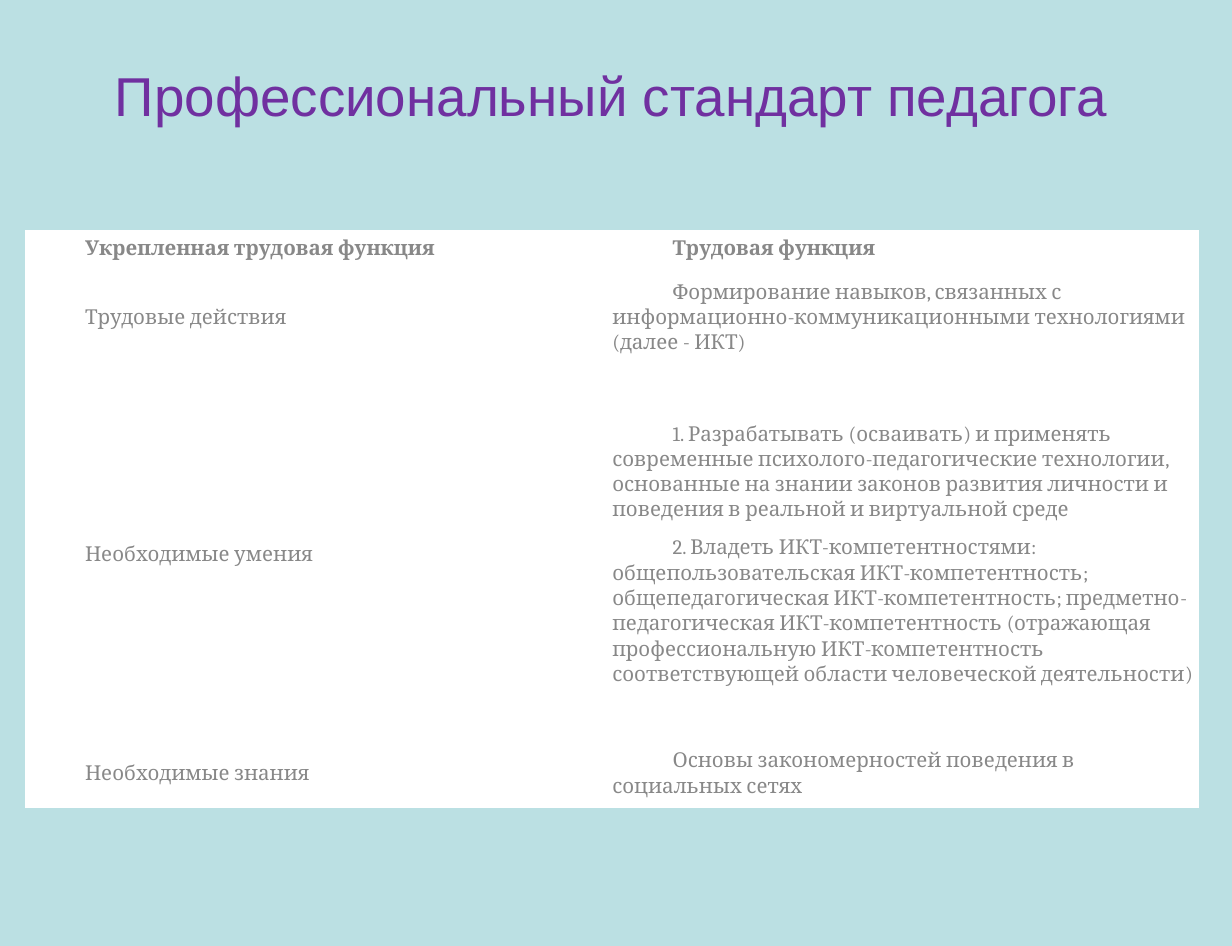
from pptx import Presentation
from pptx.dml.color import RGBColor
from pptx.enum import text
from pptx.util import Inches, Pt

BACKGROUND = RGBColor(0xBB, 0xE0, 0xE3)
PURPLE = RGBColor(0x70, 0x30, 0xA0)
GREY = RGBColor(0x88, 0x88, 0x88)
WHITE = RGBColor(0xFF, 0xFF, 0xFF)
NO_STYLE = "{2D5ABB26-0587-4C30-8999-92F81FD0307C}"

TITLE = "Профессиональный стандарт педагога"
COLUMN_WIDTHS = (4.77, 4.76)
ROW_HEIGHTS = (0.28, 0.85, 2.99, 0.57)
# Each cell is a list of paragraphs.
ROWS = [
    (["Укрепленная трудовая функция"], ["Трудовая функция"]),
    (["Трудовые действия"],
     ["Формирование навыков, связанных с информационно-коммуникационными "
      "технологиями (далее - ИКТ)"]),
    (["Необходимые умения"],
     ["1. Разрабатывать (осваивать) и применять современные "
      "психолого-педагогические технологии, основанные на знании законов "
      "развития личности и поведения в реальной и виртуальной среде",
      "2. Владеть ИКТ-компетентностями: общепользовательская "
      "ИКТ-компетентность; общепедагогическая ИКТ-компетентность; "
      "предметно-педагогическая ИКТ-компетентность (отражающая "
      "профессиональную ИКТ-компетентность соответствующей области "
      "человеческой деятельности)"]),
    (["Необходимые знания"],
     ["Основы закономерностей поведения в социальных сетях"]),
]


def write(frame, paragraphs, *, font, size, color, bold=False, align=None,
          indent=None, line_spacing=None, space_after=None):
    for index, words in enumerate(paragraphs):
        para = frame.add_paragraph() if index else frame.paragraphs[0]
        para.alignment = align
        para.line_spacing = line_spacing
        para.space_after = space_after
        if indent is not None:
            properties = para._p.get_or_add_pPr()
            properties.set("marL", "0")
            properties.set("indent", str(indent))
        span = para.add_run()
        span.text = words
        span.font.name = font
        span.font.size = size
        span.font.bold = bold
        span.font.color.rgb = color


def place_title(page, left, top, width, height):
    title = page.shapes.title
    title.left, title.top, title.width, title.height = left, top, width, height
    frame = title.text_frame
    frame.word_wrap = True
    frame.auto_size = text.MSO_AUTO_SIZE.SHAPE_TO_FIT_TEXT
    frame.vertical_anchor = text.MSO_ANCHOR.TOP
    write(frame, [TITLE], font="Arial", size=Pt(32), color=PURPLE,
          align=text.PP_ALIGN.CENTER)


def place_standard_table(page, left, top, width, height):
    table = page.shapes.add_table(len(ROWS), len(COLUMN_WIDTHS),
                                  left, top, width, height).table
    table.horz_banding = False
    table._tbl.tblPr[0].text = NO_STYLE
    for column, column_width in zip(table.columns, COLUMN_WIDTHS):
        column.width = Inches(column_width)
    for row, row_height in zip(table.rows, ROW_HEIGHTS):
        row.height = Inches(row_height)
    for row_index, row_cells in enumerate(ROWS):
        for column_index, paragraphs in enumerate(row_cells):
            cell = table.cell(row_index, column_index)
            cell.fill.solid()
            cell.fill.fore_color.rgb = WHITE
            cell.margin_left = cell.margin_right = 0
            cell.margin_top = cell.margin_bottom = 0
            cell.vertical_anchor = text.MSO_ANCHOR.MIDDLE
            write(cell.text_frame, paragraphs, font="Cambria", size=Pt(12),
                  color=GREY, bold=row_index == 0, indent=Inches(0.49),
                  line_spacing=1.07, space_after=Pt(7.5))


def main():
    deck = Presentation()
    deck.slide_width, deck.slide_height = Inches(10), Inches(7.68)
    page = deck.slides.add_slide(deck.slide_layouts[5])
    page.background.fill.solid()
    page.background.fill.fore_color.rgb = BACKGROUND
    place_standard_table(page, Inches(0.2), Inches(1.87),
                         Inches(sum(COLUMN_WIDTHS)), Inches(sum(ROW_HEIGHTS)))
    place_title(page, Inches(0.12), Inches(0.45), Inches(9.69), Inches(0.64))
    deck.save("out.pptx")


if __name__ == "__main__":
    main()
